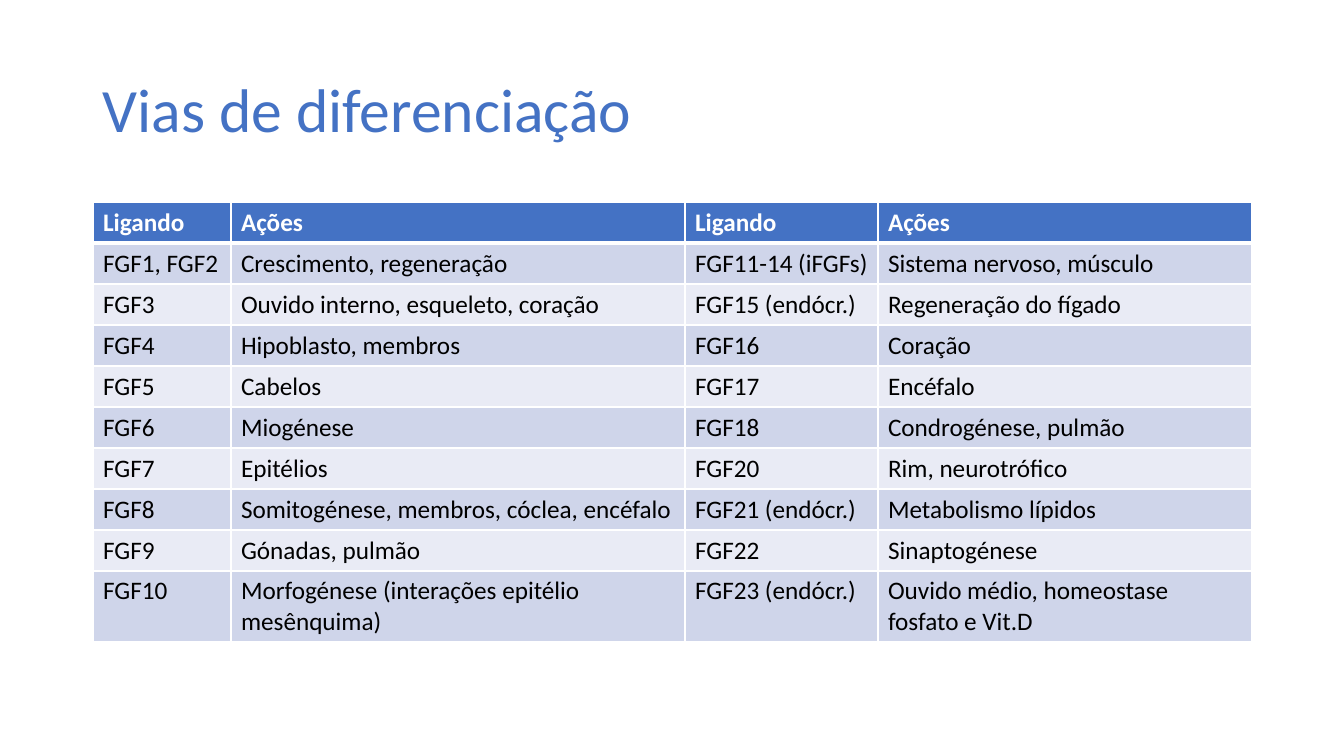
from dataclasses import dataclass

from lxml import etree
from pptx import Presentation
from pptx import util as u
from pptx.dml.color import RGBColor
from pptx.enum import text
from pptx.oxml import ns

TITLE = "Vias de diferenciação"
HEADER = ("Ligando", "Ações", "Ligando", "Ações")
LIGANDS = [
    ("FGF1, FGF2", "Crescimento, regeneração", "FGF11-14 (iFGFs)", "Sistema nervoso, músculo"),
    ("FGF3", "Ouvido interno, esqueleto, coração", "FGF15 (endócr.)", "Regeneração do fígado"),
    ("FGF4", "Hipoblasto, membros", "FGF16", "Coração"),
    ("FGF5", "Cabelos", "FGF17", "Encéfalo"),
    ("FGF6", "Miogénese", "FGF18", "Condrogénese, pulmão"),
    ("FGF7", "Epitélios", "FGF20", "Rim, neurotrófico"),
    ("FGF8", "Somitogénese, membros, cóclea, encéfalo", "FGF21 (endócr.)", "Metabolismo lípidos"),
    ("FGF9", "Gónadas, pulmão", "FGF22", "Sinaptogénese"),
    ("FGF10", "Morfogénese (interações epitélio mesênquima)", "FGF23 (endócr.)",
     "Ouvido médio, homeostase fosfato e Vit.D"),
]

PAGE_WIDTH, PAGE_HEIGHT = 1344, 756
LEFT = 93
TITLE_TOP, TITLE_HEIGHT = 40, 146
TABLE_TOP = 202
COLUMN_WIDTHS = (138, 454, 193, 374)
ROW_HEIGHTS = [41] * len(LIGANDS) + [71]
TABLE_WIDTH = sum(COLUMN_WIDTHS)


@dataclass(frozen=True)
class Theme:
    font: str = "Calibri"
    accent: str = "4472C4"
    white: str = "FFFFFF"
    ink: str = "000000"
    bands: tuple = ("CFD5EA", "E9EBF5")
    title_size: int = 44
    cell_size: int = 18
    rule: int = 1
    header_rule: int = 3


THEME = Theme()


def px(length):
    return u.Emu(round(length * 914400 / 100.8))


def style(para, size, color, bold=False):
    for span in para.runs:
        span.font.name = THEME.font
        span.font.size = u.Pt(size)
        span.font.bold = bold
        span.font.color.rgb = RGBColor.from_string(color)


def add_border(cell, side, width):
    properties = cell._tc.get_or_add_tcPr()
    line = etree.SubElement(properties, ns.qn(f"a:ln{side}"), w=str(u.Pt(width)))
    fill = etree.SubElement(line, ns.qn("a:solidFill"))
    etree.SubElement(fill, ns.qn("a:srgbClr"), val=THEME.white)


def add_title(page):
    box = page.shapes.add_textbox(px(LEFT), px(TITLE_TOP), px(TABLE_WIDTH), px(TITLE_HEIGHT))
    frame = box.text_frame
    frame.word_wrap = True
    frame.vertical_anchor = text.MSO_ANCHOR.MIDDLE
    frame.text = TITLE
    para = frame.paragraphs[0]
    para.line_spacing = 0.9
    style(para, THEME.title_size, THEME.accent)


def fill_cell(cell, words, row):
    is_header = row == 0
    cell.text_frame.text = words
    color = THEME.white if is_header else THEME.ink
    style(cell.text_frame.paragraphs[0], THEME.cell_size, color, is_header)
    top = THEME.header_rule if row == 1 else THEME.rule
    bottom = THEME.header_rule if is_header else THEME.rule
    for side, width in (("L", THEME.rule), ("R", THEME.rule), ("T", top), ("B", bottom)):
        add_border(cell, side, width)
    band = THEME.accent if is_header else THEME.bands[(row - 1) % 2]
    cell.fill.solid()
    cell.fill.fore_color.rgb = RGBColor.from_string(band)


def add_ligand_table(page):
    rows = [HEADER, *LIGANDS]
    table = page.shapes.add_table(
        len(rows), len(HEADER), px(LEFT), px(TABLE_TOP), px(TABLE_WIDTH), px(sum(ROW_HEIGHTS))
    ).table
    for column, width in zip(table.columns, COLUMN_WIDTHS):
        column.width = px(width)
    for row, (entries, height) in enumerate(zip(rows, ROW_HEIGHTS)):
        table.rows[row].height = px(height)
        for column, words in enumerate(entries):
            fill_cell(table.cell(row, column), words, row)


def main():
    deck = Presentation()
    deck.slide_width, deck.slide_height = px(PAGE_WIDTH), px(PAGE_HEIGHT)
    page = deck.slides.add_slide(deck.slide_layouts[6])
    add_title(page)
    add_ligand_table(page)
    deck.save("out.pptx")


if __name__ == "__main__":
    main()
